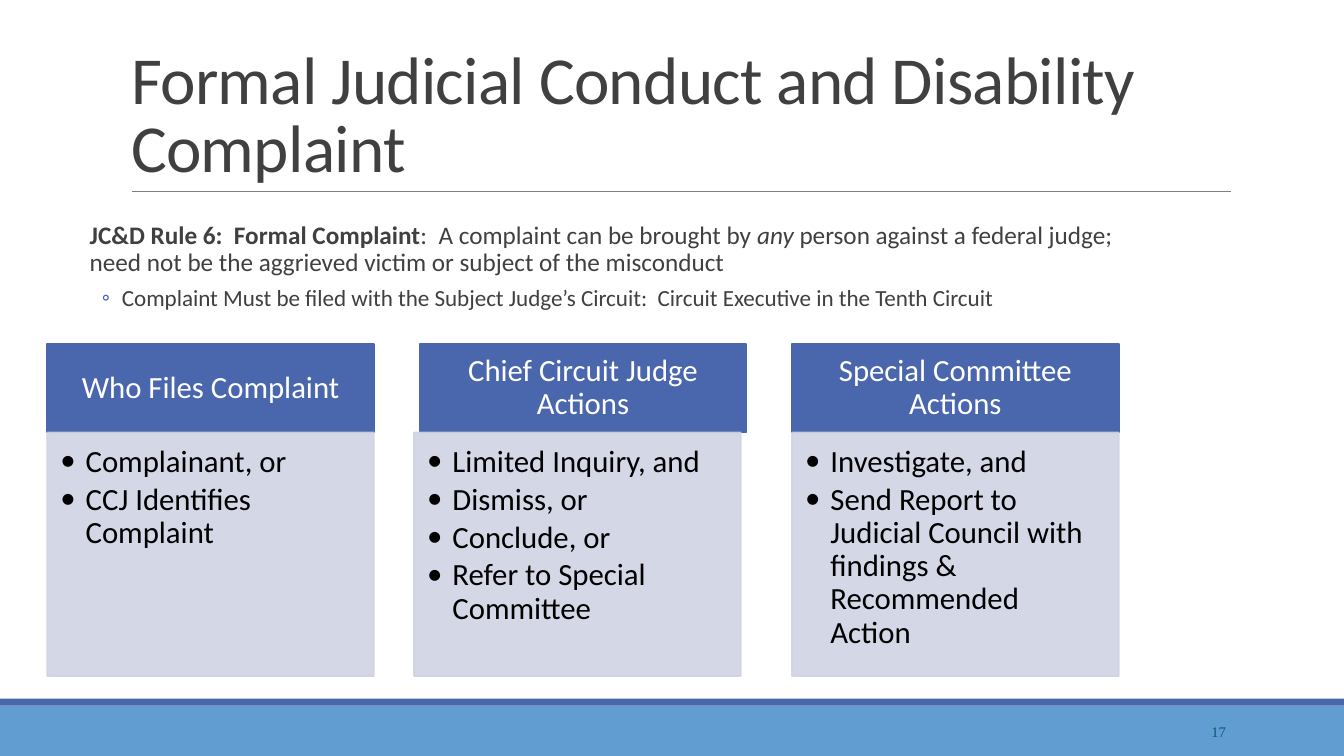
from lxml import etree
from pptx import Presentation
from pptx import util as u
from pptx.dml.color import RGBColor
from pptx.enum import shapes, text
from pptx.oxml import ns

Pt = u.Pt
COLORS = {
    "sky": "629DD1", "navy": "4A66AC", "rule": "808080", "ink": "404040",
    "panel": "D0D3E3", "number": "045D75", "white": "FFFFFF", "black": "000000",
}


def style(para, size, color, line=None, before=0, after=0, font="Calibri"):
    para.font.size, para.font.name = Pt(size), font
    para.font.color.rgb = RGBColor.from_string(COLORS[color])
    para.line_spacing = line
    para.space_before, para.space_after = Pt(before), Pt(after)


def bullet(para, left, hanging, char=None, color="black"):
    props = para._p.get_or_add_pPr()
    props.set("marL", str(Pt(left)))
    props.set("indent", str(-Pt(hanging)))
    if char is None:
        etree.SubElement(props, ns.qn("a:buNone"))
    else:
        tint = etree.SubElement(props, ns.qn("a:buClr"))
        etree.SubElement(tint, ns.qn("a:srgbClr"), val=COLORS[color])
        etree.SubElement(props, ns.qn("a:buFont"), typeface="Calibri")
        etree.SubElement(props, ns.qn("a:buChar"), char=char)


deck = Presentation()
deck.slide_width, deck.slide_height = Pt(960), Pt(540)
slide = deck.slides.add_slide(deck.slide_layouts[1])

# Footer bands
for top, height, color in [(504, 36, "sky"), (499, 5, "navy")]:
    band = slide.shapes.add_shape(
        shapes.MSO_SHAPE.RECTANGLE, Pt(0), Pt(top), Pt(960), Pt(height))
    band.shadow.inherit = False
    band.fill.solid()
    band.fill.fore_color.rgb = RGBColor.from_string(COLORS[color])
    band.line.fill.background()

# Rule under the title
rule = slide.shapes.add_connector(
    shapes.MSO_CONNECTOR.STRAIGHT, Pt(94.3), Pt(136.8), Pt(879), Pt(136.8))
rule.line.color.rgb = RGBColor.from_string(COLORS["rule"])
rule.line.width = Pt(0.5)
etree.SubElement(rule._element.spPr, ns.qn("a:effectLst"))

# Title
title = slide.shapes.title
title.left, title.top, title.width, title.height = Pt(86.4), Pt(22.3), Pt(792), Pt(114.5)
title.text_frame.text = "Formal Judicial Conduct and Disability Complaint"
title.text_frame.vertical_anchor = text.MSO_ANCHOR.BOTTOM
title.text_frame.auto_size = text.MSO_AUTO_SIZE.NONE
heading = title.text_frame.paragraphs[0]
heading.alignment = text.PP_ALIGN.LEFT
style(heading, 48, "ink", 0.85)
heading.runs[0]._r.get_or_add_rPr().set("spc", "-50")

# Rule 6 summary
summary = slide.placeholders[1]
summary.left, summary.top, summary.width, summary.height = Pt(56.9), Pt(155.5), Pt(759.6), Pt(373.7)
frame = summary.text_frame
frame.auto_size = text.MSO_AUTO_SIZE.NONE
frame.margin_left = frame.margin_right = 0
frame.margin_top = frame.margin_bottom = Pt(3.6)
rule_six = frame.paragraphs[0]
for words, bold, italic in [
    ("JC&D Rule 6:  Formal Complaint", True, False),
    (":  A complaint can be brought by ", False, False),
    ("any ", False, True),
    ("person against a federal judge; need not be the aggrieved victim "
     "or subject of the misconduct", False, False),
]:
    run = rule_six.add_run()
    run.text, run.font.bold, run.font.italic = words, bold, italic
style(rule_six, 18, "ink", 0.9, 4.5, 2)
bullet(rule_six, 7.2, 0)

filing = frame.add_paragraph()
filing.text = ("Complaint Must be filed with the Subject Judge’s Circuit:  "
               "Circuit Executive in the Tenth Circuit")
filing.level = 1
style(filing, 16.5, "ink", 0.9, 4.5, 4)
bullet(filing, 30.2, 14.4, "◦", "navy")

# Three stages: header over a panel of steps; the middle panel sits slightly left
stages = [
    ("Who Files Complaint", 0, ["Complainant, or", "CCJ Identifies Complaint"]),
    ("Chief Circuit Judge Actions", -4,
     ["Limited Inquiry, and", "Dismiss, or", "Conclude, or",
      "Refer to Special Committee"]),
    ("Special Committee Actions", 0,
     ["Investigate, and",
      "Send Report to Judicial Council with findings & Recommended Action"]),
]
for column, (stage, shift, steps) in enumerate(stages):
    left = 33.8 + 266 * column
    for x, top, height, color, lines, margins in [
        (left, 245.5, 63.5, "navy", [stage], (12.2, 7.2, 12.2, 7.2)),
        (left + shift, 309, 174, "panel", steps, (9.4, 9.4, 12.2, 13.7)),
    ]:
        card = slide.shapes.add_shape(
            shapes.MSO_SHAPE.RECTANGLE, Pt(x), Pt(top), Pt(233.3), Pt(height))
        card.shadow.inherit = False
        card.fill.solid()
        card.fill.fore_color.rgb = RGBColor.from_string(COLORS[color])
        card.line.color.rgb = RGBColor.from_string(COLORS[color])
        card.line.width = Pt(1.25)
        frame = card.text_frame
        frame.word_wrap = True
        (frame.margin_left, frame.margin_top,
         frame.margin_right, frame.margin_bottom) = map(Pt, margins)
        frame.text = "\n".join(lines)
        is_panel = color == "panel"
        frame.vertical_anchor = text.MSO_ANCHOR.TOP if is_panel else text.MSO_ANCHOR.MIDDLE
        for para in frame.paragraphs:
            para.alignment = text.PP_ALIGN.LEFT if is_panel else text.PP_ALIGN.CENTER
            style(para, 22, "black" if is_panel else "white", 0.9,
                  after=3.3 if is_panel else 0)
            if is_panel:
                bullet(para, 18, 18, "•")
        if is_panel:
            for tone in card._element.spPr.iter(ns.qn("a:srgbClr")):
                etree.SubElement(tone, ns.qn("a:alpha"), val="90000")

# Page number
page = slide.shapes.add_textbox(Pt(779.8), Pt(508.3), Pt(103), Pt(28.8))
page.text_frame.word_wrap = True
page.text_frame.vertical_anchor = text.MSO_ANCHOR.MIDDLE
page.text_frame.text = "17"
number = page.text_frame.paragraphs[0]
number.alignment = text.PP_ALIGN.RIGHT
style(number, 10.5, "number", font="Times New Roman")

deck.save("out.pptx")
